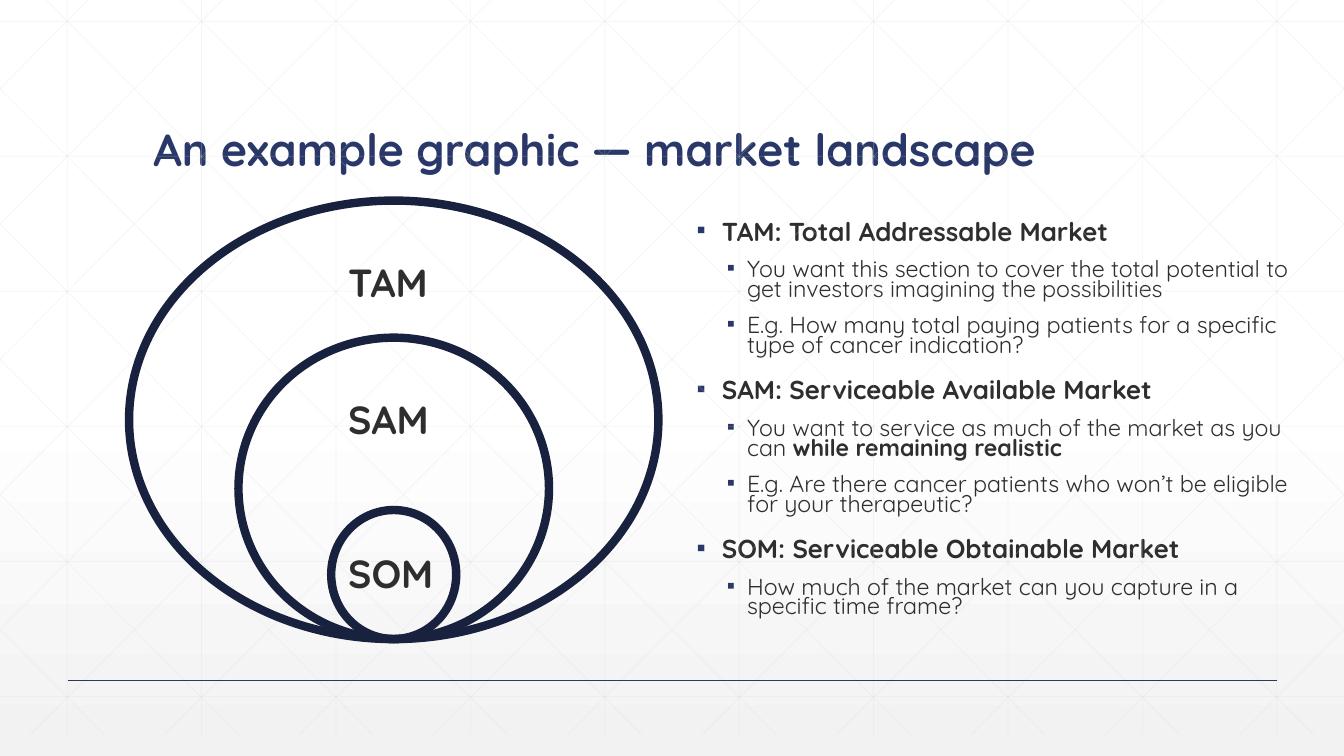
from lxml.etree import SubElement
from pptx import Presentation
from pptx.dml.color import RGBColor
from pptx.enum.shapes import MSO_CONNECTOR as CONNECTOR, MSO_SHAPE as SHAPE
from pptx.enum.text import MSO_ANCHOR as ANCHOR, MSO_AUTO_SIZE as AUTO_SIZE, PP_ALIGN as ALIGN
from pptx.oxml.ns import qn
from pptx.util import Pt

PX = 9144
WIDTH, HEIGHT = 1333, 750
FONT = "Quicksand"
BLUE = RGBColor(0x29, 0x38, 0x68)
NAVY = RGBColor(0x18, 0x21, 0x3D)
INK = RGBColor(0x2D, 0x2E, 0x2D)
GRID = RGBColor(0xD9, 0xD9, 0xD9)
WHITE = RGBColor(0xFF, 0xFF, 0xFF)
PALE = RGBColor(0xF2, 0xF2, 0xF2)

MARKETS = [
    ("TAM: Total Addressable Market", [
        [("You want this section to cover the total potential to get investors "
          "imagining the possibilities", False)],
        [("E.g. How many total paying patients for a specific type of cancer indication?", False)],
    ]),
    ("SAM: Serviceable Available Market", [
        [("You want to service as much of the market as you can ", False),
         ("while remaining realistic", True)],
        [("E.g. Are there cancer patients who won’t be eligible for your therapeutic?", False)],
    ]),
    ("SOM: Serviceable Obtainable Market", [
        [("How much of the market can you capture in a specific time frame?", False)],
    ]),
]
RINGS = [("TAM", 525, 435, 52), ("SAM", 308, 299, 188), ("SOM", 124, 128, 341)]


def emu(*lengths):
    return [round(length * PX) for length in lengths]


def place(shape, box):
    shape.left, shape.top, shape.width, shape.height = emu(*box)


def add_span(para, text, size, color=INK, bold=False):
    span = para.add_run()
    span.text = text
    span.font.name = FONT
    span.font.size = Pt(size)
    span.font.bold = bold
    span.font.color.rgb = color
    return span


def add_line(shapes, start, end, color, width, alpha=None):
    line = shapes.add_connector(CONNECTOR.STRAIGHT, *emu(*start, *end))
    line.line.color.rgb = color
    line.line.width = Pt(width)
    properties = line._element.spPr
    if alpha is not None:
        SubElement(next(properties.iter(qn("a:srgbClr"))), qn("a:alpha"), val=str(alpha * 1000))
    SubElement(properties, qn("a:effectLst"))


def paint_background(page):
    fill = page.background.fill
    fill.gradient()
    fill.gradient_angle = 270
    stops = next(page.background._cSld.iter(qn("a:gsLst")))
    stops.clear()
    for position, color, alpha in [(0, WHITE, 100), (53, WHITE, 100), (100, PALE, 65)]:
        stop = SubElement(stops, qn("a:gs"), pos=str(position * 1000))
        tone = SubElement(stop, qn("a:srgbClr"), val=str(color))
        if alpha < 100:
            SubElement(tone, qn("a:alpha"), val=str(alpha * 1000))


def add_grid(page, box):
    left, top, width, height = box
    right, bottom = left + width, top + height
    step, run = width / 10, 745
    shapes = page.shapes.add_group_shape().shapes

    def grid_line(start, end):
        add_line(shapes, start, end, GRID, 0.5, alpha=25)

    for column in range(10):
        x = left + step * (column + 0.5)
        grid_line((x, top), (x, bottom))
    for row in range(6):
        y = top + 42 + 134 * row
        grid_line((left, y), (right, y))
    for index in range(-5, 10):
        origin = left + 25 + step * index
        x1, x2 = max(origin, left), min(origin + run, right)
        y1, y2 = [top + height * (x - origin) / run for x in (x1, x2)]
        grid_line((x1, y1), (x2, y2))
        grid_line((left + right - x1, y1), (left + right - x2, y2))


def add_title(page, box):
    title = page.shapes.title
    place(title, box)
    frame = title.text_frame
    frame.auto_size = AUTO_SIZE.NONE
    frame.vertical_anchor = ANCHOR.BOTTOM
    para = frame.paragraphs[0]
    para.alignment = ALIGN.LEFT
    para.line_spacing = 0.9
    add_span(para, "An example graphic — market landscape", 32, color=BLUE, bold=True)


def add_bullet(para, spans, level, size, before):
    para.level = level
    para.line_spacing = 0.7
    para.space_before = Pt(before)
    properties = para._p.get_or_add_pPr()
    margin, hanging = emu(*[(25, 25), (50, 20)][level])
    properties.set("marL", str(margin))
    properties.set("indent", str(-hanging))
    SubElement(SubElement(properties, qn("a:buClr")), qn("a:srgbClr"), val=str(BLUE))
    SubElement(properties, qn("a:buChar"), char="▪")
    for text, bold in spans:
        add_span(para, text, size, bold=bold)


def add_definitions(page, box):
    body = page.placeholders[1]
    place(body, box)
    frame = body.text_frame
    frame.auto_size = AUTO_SIZE.NONE
    frame.vertical_anchor = ANCHOR.TOP
    for index, (heading, details) in enumerate(MARKETS):
        para = frame.add_paragraph() if index else frame.paragraphs[0]
        add_bullet(para, [(heading, True)], 0, 18.5, 18 if index else 0)
        for spans in details:
            add_bullet(frame.add_paragraph(), spans, 1, 16.6, 12)


def add_rings(page, box):
    left, top, width, height = box
    middle, bottom = left + width / 2, top + height
    for name, ring_width, ring_height, label_top in RINGS:
        ring = page.shapes.add_shape(SHAPE.OVAL, *emu(
            middle - ring_width / 2, bottom - ring_height, ring_width, ring_height))
        ring.shadow.inherit = False
        ring.fill.background()
        ring.line.color.rgb = NAVY
        ring.line.width = Pt(6)
        label = page.shapes.add_textbox(*emu(middle - 55, top + label_top, 110, 57))
        label.text_frame.word_wrap = True
        add_span(label.text_frame.paragraphs[0], name, 28, bold=True)


def main():
    deck = Presentation()
    deck.slide_width, deck.slide_height = emu(WIDTH, HEIGHT)
    page = deck.slides.add_slide(deck.slide_layouts[1])
    paint_background(page)
    add_grid(page, (0, -21, WIDTH, HEIGHT))
    add_line(page.shapes, (67, 675), (1267, 675), BLUE, 1)
    add_title(page, (142, 55, 1050, 125))
    add_definitions(page, (681, 217, 607, 417))
    add_rings(page, (128, 199, 525, 435))
    deck.save("out.pptx")


if __name__ == "__main__":
    main()
